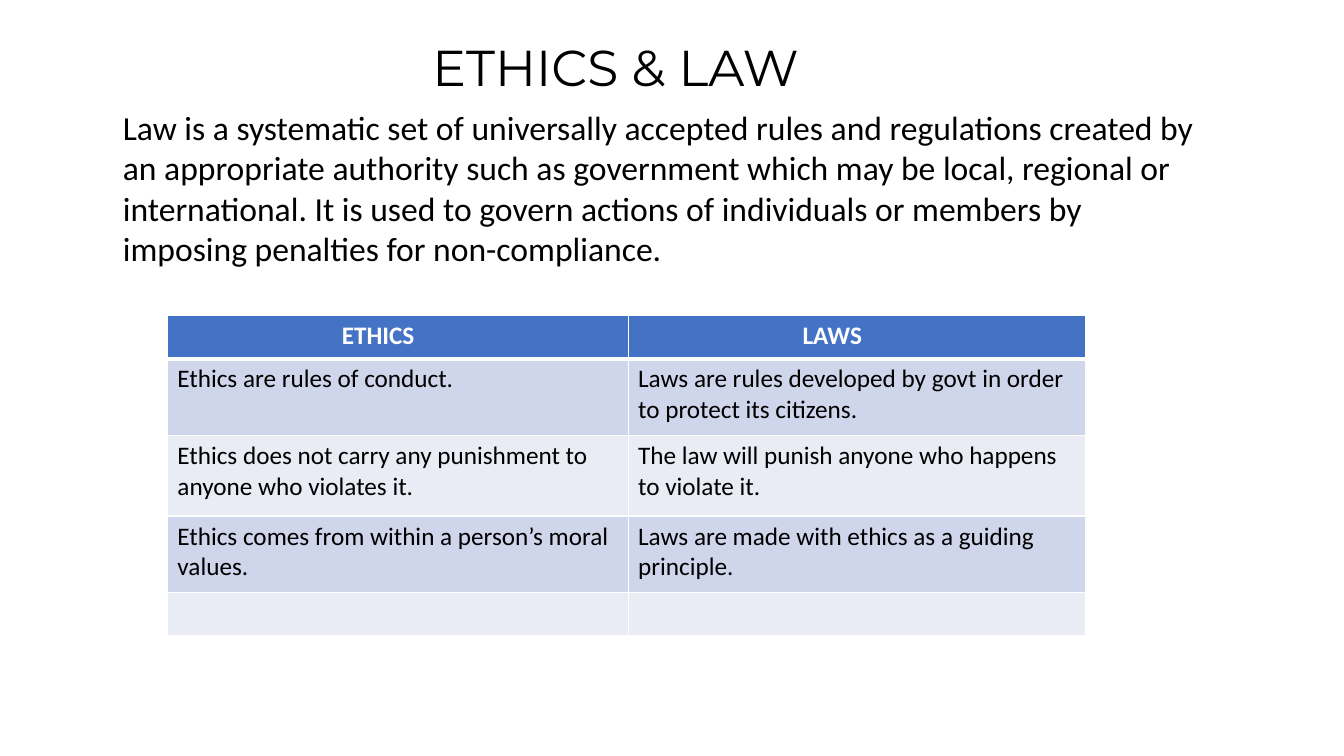
from lxml import etree
from pptx import Presentation
from pptx.dml.color import RGBColor
from pptx.enum import text
from pptx.oxml.ns import qn
from pptx.util import Inches, Pt

# Content
TITLE = "ETHICS & LAW"
INTRO = (
    "Law is a systematic set of universally accepted rules and regulations "
    "created by an appropriate authority such as government which may be "
    "local, regional or international. It is used to govern actions of "
    "individuals or members by imposing penalties for non-compliance."
)
ROWS = [
    ("ETHICS", "LAWS"),
    ("Ethics are rules of conduct.",
     "Laws are rules developed by govt in order to protect its citizens."),
    ("Ethics does not carry any punishment to anyone who violates it.",
     "The law will punish anyone who happens to violate it."),
    ("Ethics comes from within a person’s moral values.",
     "Laws are made with ethics as a guiding principle."),
    ("", ""),
]
WIDTHS = [4.57, 4.54]
HEIGHTS = [0.43, 0.76, 0.8, 0.76, 0.43]
INDENT = 1.73  # left margin of the header cells
COLORS = {"ink": "000000", "white": "FFFFFF", "head": "4472C4",
          "dark": "CFD5EA", "light": "E9EBF5"}


def style(para, face, size, color, bold=False):
    font = para.font
    font.name, font.size, font.bold = face, Pt(size), bold
    font.color.rgb = RGBColor.from_string(COLORS[color])


def add_text(slide, box, words, face, size, align):
    frame = slide.shapes.add_textbox(*map(Inches, box)).text_frame
    frame.word_wrap = True
    para = frame.paragraphs[0]
    para.text, para.alignment = words, align
    style(para, face, size, "ink")


def add_edges(cell, bottom):
    props = cell._tc.get_or_add_tcPr()
    widths = {"lnL": 1, "lnR": 1, "lnT": 1, "lnB": bottom}
    for spot, (tag, width) in enumerate(widths.items()):
        line = etree.Element(qn("a:" + tag), w=str(Pt(width)))
        fill = etree.SubElement(line, qn("a:solidFill"))
        etree.SubElement(fill, qn("a:srgbClr"), val=COLORS["white"])
        props.insert(spot, line)


def add_grid(slide):
    grid = slide.shapes.add_table(
        len(ROWS), len(WIDTHS), Inches(1.66), Inches(3.13),
        Inches(sum(WIDTHS)), Inches(sum(HEIGHTS))).table
    for col, width in zip(grid.columns, WIDTHS):
        col.width = Inches(width)
    for r, (row, height) in enumerate(zip(ROWS, HEIGHTS)):
        grid.rows[r].height = Inches(height)
        head = r == 0
        shade = "head" if head else "dark" if r % 2 else "light"
        for c, words in enumerate(row):
            cell = grid.cell(r, c)
            para = cell.text_frame.paragraphs[0]
            para.text = words
            style(para, "Calibri", 18, "white" if head else "ink", head)
            cell.fill.solid()
            cell.fill.fore_color.rgb = RGBColor.from_string(COLORS[shade])
            if head:
                cell.margin_left = Inches(INDENT)
            add_edges(cell, 3 if head else 1)


def main():
    deck = Presentation()
    deck.slide_width, deck.slide_height = Inches(13.33), Inches(7.5)
    slide = deck.slides.add_slide(deck.slide_layouts[6])
    # Heading and definition
    add_text(slide, (2.32, 0.31, 7.57, 0.71), TITLE, "Montserrat", 36,
             text.PP_ALIGN.CENTER)
    add_text(slide, (1.12, 1.01, 10.91, 1.72), INTRO, "Calibri", 24,
             text.PP_ALIGN.LEFT)
    # Comparison table
    add_grid(slide)
    deck.save("out.pptx")


if __name__ == "__main__":
    main()
